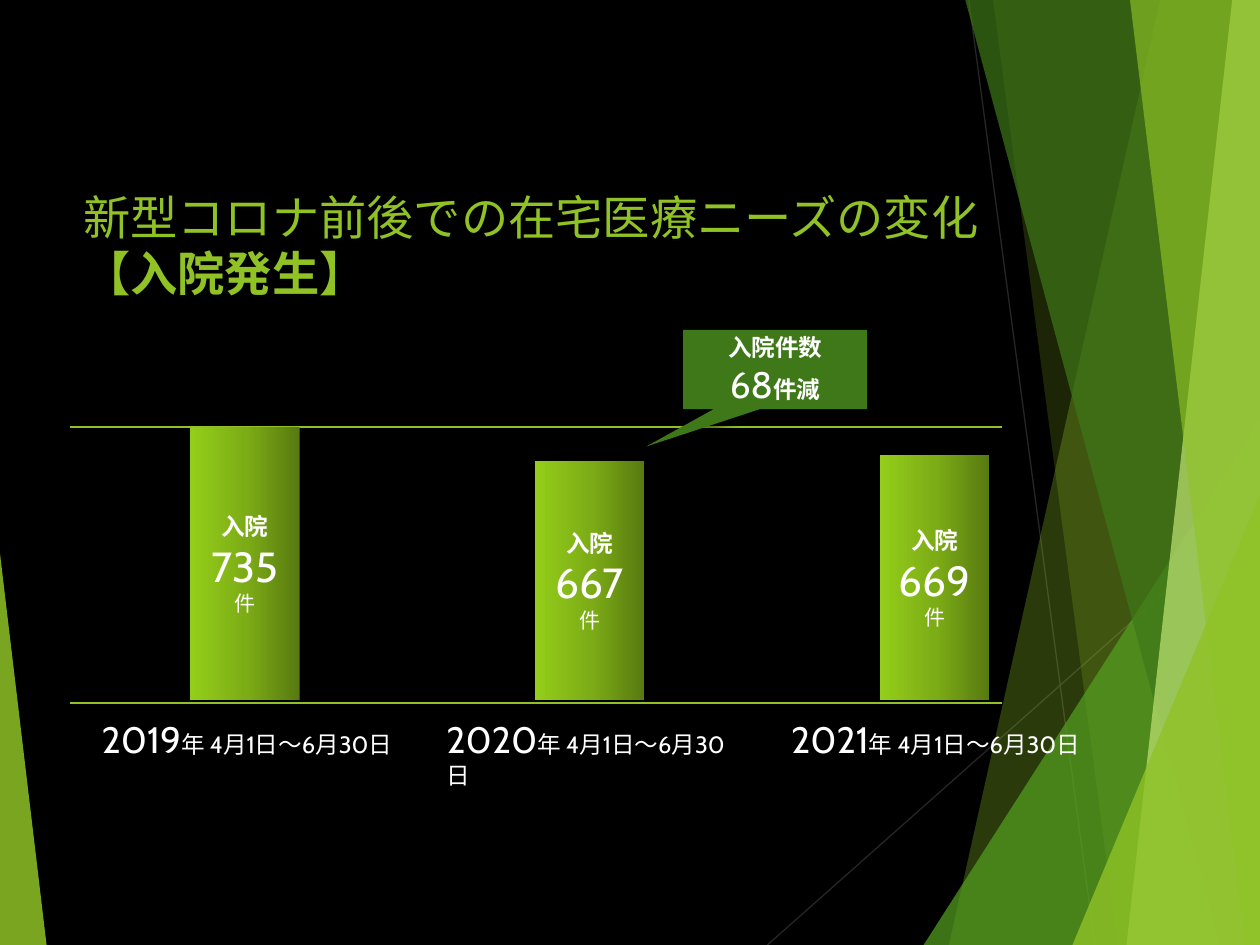
import copy
from dataclasses import dataclass

import pptx
import pptx.dml.color
import pptx.enum.shapes
import pptx.enum.text
import pptx.oxml
import pptx.oxml.ns
import pptx.util
from pptx.util import Cm

Kind = pptx.enum.shapes.MSO_SHAPE
Align = pptx.enum.text.PP_ALIGN
Anchor = pptx.enum.text.MSO_ANCHOR
AutoSize = pptx.enum.text.MSO_AUTO_SIZE
qn = pptx.oxml.ns.qn

WIDTH, HEIGHT = 25.4, 19.05
GREEN, DARK, WHITE = "90C226", "3F7819", "FFFFFF"
PITCH, BAR_LEFT, BAR_WIDTH, BAR_BOTTOM = 6.95, 3.84, 2.2, 14.12
GRADIENT = [(0, "587A10"), (0.5, "7DAD16"), (1, "94CE1A")]
SHADOW = (
    '<a:outerShdw xmlns:a="http://schemas.openxmlformats.org/drawingml/2006/main"'
    ' blurRad="50800" dist="38100" dir="2700000"><a:srgbClr val="000000">'
    '<a:alpha val="40000"/></a:srgbClr></a:outerShdw>'
)


@dataclass
class Facet:
    points: list[tuple[float, float]]
    color: str
    opacity: int


@dataclass
class Rule:
    start: tuple[float, float]
    end: tuple[float, float]
    color: str
    width: float


@dataclass
class Span:
    text: str
    size: float
    bold: bool = False


@dataclass
class Period:
    year: str
    count: str
    height: float


def band(top: float, bottom: float, color: str, opacity: int) -> Facet:
    points = [(top, 0), (WIDTH, 0), (WIDTH, HEIGHT), (bottom, HEIGHT)]
    return Facet(points, color, opacity)


def corner(left: float, top: float, color: str, opacity: int) -> Facet:
    return Facet([(WIDTH, top), (WIDTH, HEIGHT), (left, HEIGHT)], color, opacity)


FACETS = [
    band(23.39, 19.13, GREEN, 30),
    band(20.02, 22.53, GREEN, 20),
    corner(18.62, 8.46, "54A021", 72),
    band(19.46, 24.59, DARK, 70),
    band(24.84, 22.71, "C0E474", 70),
    band(22.78, 25.1, GREEN, 65),
    corner(21.62, 9.98, GREEN, 80),
    Facet([(0, 11.15), (0.94, HEIGHT), (0, HEIGHT)], GREEN, 85),
]
BACK_RULES = [
    Rule((19.53, 0), (22.07, HEIGHT), "262626", 0.75),
    Rule((WIDTH, 10.24), (15.47, HEIGHT), "262626", 0.75),
]
CHART_RULES = [Rule((1.42, y), (20.19, y), GREEN, 1) for y in (8.61, 14.17)]
PERIODS = [
    Period("2019", "735", 5.51),
    Period("2020", "667", 4.83),
    Period("2021", "669", 4.95),
]


def rgb(color: str) -> pptx.dml.color.RGBColor:
    return pptx.dml.color.RGBColor.from_string(color)


def apply(target, values: dict) -> None:
    for name, value in values.items():
        setattr(target, name, value)


def write(frame, lines: list[list[Span]], color: str, align, anchor) -> None:
    apply(frame, {"word_wrap": True, "vertical_anchor": anchor})
    for index, spans in enumerate(lines):
        para = frame.add_paragraph() if index else frame.paragraphs[0]
        para.alignment = align
        for item in spans:
            span = para.add_run()
            span.text = item.text
            apply(span.font, {"name": "Cabin", "size": pptx.util.Pt(item.size), "bold": item.bold})
            span.font.color.rgb = rgb(color)


def draw_rule(page, rule: Rule) -> None:
    ends = [Cm(value) for value in rule.start + rule.end]
    line = page.shapes.add_connector(pptx.enum.shapes.MSO_CONNECTOR.STRAIGHT, *ends)
    line.line.color.rgb = rgb(rule.color)
    line.line.width = pptx.util.Pt(rule.width)
    line.element.spPr.append(pptx.oxml.ns.qn and pptx.oxml.parse_xml(
        '<a:effectLst xmlns:a="http://schemas.openxmlformats.org/drawingml/2006/main"/>'))


def draw_facet(page, facet: Facet) -> None:
    points = [(Cm(x), Cm(y)) for x, y in facet.points]
    builder = page.shapes.build_freeform(*points[0])
    builder.add_line_segments(points[1:], close=True)
    shape = builder.convert_to_shape()
    shape.shadow.inherit = False
    shape.fill.solid()
    shape.fill.fore_color.rgb = rgb(facet.color)
    shape.line.fill.background()
    tint = shape.element.spPr.find(f"{qn('a:solidFill')}/{qn('a:srgbClr')}")
    alpha = tint.makeelement(qn("a:alpha"), {"val": str(facet.opacity * 1000)})
    tint.append(alpha)


def add_plain(page, kind, left: float, top: float, width: float, height: float):
    shape = page.shapes.add_shape(kind, Cm(left), Cm(top), Cm(width), Cm(height))
    shape.shadow.inherit = False
    shape.line.fill.background()
    return shape


def draw_period(page, period: Period, index: int) -> None:
    shift = index * PITCH
    bar = add_plain(page, Kind.RECTANGLE, BAR_LEFT + shift, BAR_BOTTOM - period.height,
                    BAR_WIDTH, period.height)
    bar.fill.gradient()
    bar.fill.gradient_angle = 180
    stops = bar.element.spPr.find(f"{qn('a:gradFill')}/{qn('a:gsLst')}")
    stops.insert(1, copy.deepcopy(stops[0]))
    for stop, (position, color) in zip(bar.fill.gradient_stops, GRADIENT):
        stop.position = position
        stop.color.rgb = rgb(color)
    lines = [[Span("入院", 13.5, True)], [Span(period.count, 24), Span("件", 12)]]
    write(bar.text_frame, lines, WHITE, Align.CENTER, Anchor.MIDDLE)

    label = page.shapes.add_textbox(Cm(1.8 + shift), Cm(14.33), Cm(6.38), Cm(1.14))
    lines = [[Span(period.year, 21), Span("年 4月1日～6月30日", 13.5)]]
    write(label.text_frame, lines, WHITE, Align.LEFT, Anchor.TOP)


def draw_callout(page) -> None:
    callout = add_plain(page, Kind.RECTANGULAR_CALLOUT, 13.77, 6.65, 3.71, 1.6)
    callout.adjustments[0], callout.adjustments[1] = -0.7, 0.97
    callout.fill.solid()
    callout.fill.fore_color.rgb = rgb(DARK)
    callout.element.spPr.find(qn("a:effectLst")).append(pptx.oxml.parse_xml(SHADOW))
    lines = [[Span("入院件数", 13.5, True)], [Span("68", 21), Span("件減", 13.5, True)]]
    write(callout.text_frame, lines, WHITE, Align.CENTER, Anchor.MIDDLE)


def format_title(title) -> None:
    apply(title, {"left": Cm(1.42), "top": Cm(3.66), "width": Cm(19.94), "height": Cm(2.74)})
    title.text_frame.auto_size = AutoSize.NONE
    spans = [Span("新型コロナ前後での在宅医療ニーズの変化\v", 27), Span("【入院発生】", 27, True)]
    for span in spans:
        span.text = span.text.rstrip("\v")
    write(title.text_frame, [spans[:1]], GREEN, Align.LEFT, Anchor.TOP)
    para = title.text_frame.paragraphs[0]
    para.add_line_break()
    write(title.text_frame, [spans[1:]], GREEN, Align.LEFT, Anchor.TOP)


def main() -> None:
    deck = pptx.Presentation()
    apply(deck, {"slide_width": Cm(WIDTH), "slide_height": Cm(HEIGHT)})
    page = deck.slides.add_slide(deck.slide_layouts[5])
    page.background.fill.solid()
    page.background.fill.fore_color.rgb = rgb("000000")
    for rule in BACK_RULES:
        draw_rule(page, rule)
    for facet in FACETS:
        draw_facet(page, facet)
    format_title(page.shapes.title)
    for rule in CHART_RULES:
        draw_rule(page, rule)
    for index, period in enumerate(PERIODS):
        draw_period(page, period, index)
    draw_callout(page)
    deck.save("out.pptx")


if __name__ == "__main__":
    main()
